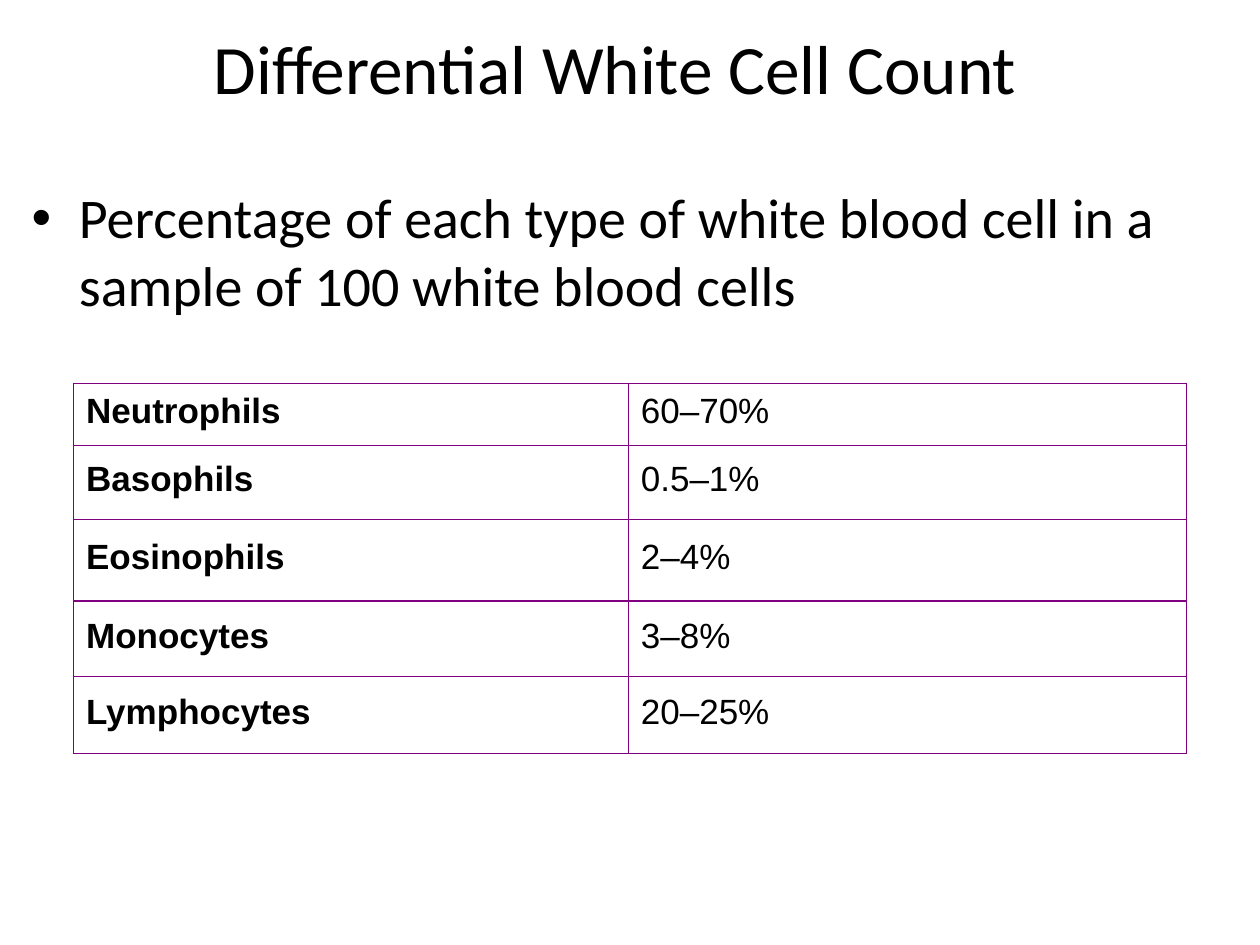
"""Builds a slide on the differential white cell count."""
from lxml import etree
from pptx import Presentation
from pptx.dml.color import RGBColor
from pptx.enum.text import MSO_ANCHOR, PP_ALIGN
from pptx.oxml.ns import qn
from pptx.util import Pt

MIDDLE, TOP = MSO_ANCHOR.MIDDLE, MSO_ANCHOR.TOP
CENTER, LEFT = PP_ALIGN.CENTER, PP_ALIGN.LEFT
BLACK, PURPLE = "000000", "800080"

TITLE = "Differential White Cell Count"
DEFINITION = "Percentage of each type of white blood cell in a sample of 100 white blood cells"
CELL_TYPES = [
    ("Neutrophils", "60–70%"),
    ("Basophils", "0.5–1%"),
    ("Eosinophils", "2–4%"),
    ("Monocytes", "3–8%"),
    ("Lymphocytes", "20–25%"),
]
COL_WIDTHS = [317, 319]
ROW_HEIGHTS = [35.5, 42.5, 46.5, 43, 44]


def rgb(color):
    return RGBColor.from_string(color)


def write(tf, text, size, font="Calibri", bold=False, align=LEFT, spacing=None, bullet=None, indent=27):
    tf.word_wrap = True
    p = tf.paragraphs[0]
    p.alignment = align
    p.line_spacing = spacing
    if bullet:
        pPr = p._p.get_or_add_pPr()
        pPr.set("marL", str(Pt(indent)))
        pPr.set("indent", str(Pt(-indent)))
        etree.SubElement(pPr, qn("a:buFont")).set("typeface", "Arial")
        etree.SubElement(pPr, qn("a:buChar")).set("char", bullet)
    r = p.add_run()
    r.text = text
    r.font.name, r.font.size, r.font.bold = font, Pt(size), bold
    r.font.color.rgb = rgb(BLACK)


def border(cell, color, width):
    tcPr = cell._tc.get_or_add_tcPr()
    for i, side in enumerate(("lnL", "lnR", "lnT", "lnB")):
        ln = etree.Element(qn(f"a:{side}"), w=str(Pt(width)))
        fill = etree.SubElement(ln, qn("a:solidFill"))
        etree.SubElement(fill, qn("a:srgbClr"), val=color)
        tcPr.insert(i, ln)


def add_title(s):
    sp = s.shapes.title
    sp.left, sp.top, sp.width, sp.height = Pt(9.5), Pt(8), Pt(684), Pt(60)
    sp.text_frame.vertical_anchor = MIDDLE
    write(sp.text_frame, TITLE, 39.6, align=CENTER)


def add_definition(s):
    sp = s.shapes.add_textbox(Pt(11), Pt(101), Pt(684), Pt(408))
    sp.text_frame.vertical_anchor = TOP
    write(sp.text_frame, DEFINITION, 32, bullet="•")


def add_cell_table(s):
    frame = s.shapes.add_table(len(CELL_TYPES), len(COL_WIDTHS), Pt(42), Pt(219),
                               Pt(sum(COL_WIDTHS)), Pt(sum(ROW_HEIGHTS)))
    table = frame.table
    table.first_row = table.horz_banding = False
    for col, width in zip(table.columns, COL_WIDTHS):
        col.width = Pt(width)
    for row, height, values in zip(table.rows, ROW_HEIGHTS, CELL_TYPES):
        row.height = Pt(height)
        for i, (cell, text) in enumerate(zip(row.cells, values)):
            cell.fill.background()
            cell.vertical_anchor = MIDDLE
            border(cell, PURPLE, 1)
            write(cell.text_frame, text, 20, font="Arial", bold=i == 0, spacing=0.8)


def main():
    prs = Presentation()
    prs.slide_width, prs.slide_height = Pt(720), Pt(540)
    s = prs.slides.add_slide(prs.slide_layouts[5])
    add_definition(s)
    add_cell_table(s)
    add_title(s)
    prs.save("out.pptx")


if __name__ == "__main__":
    main()
